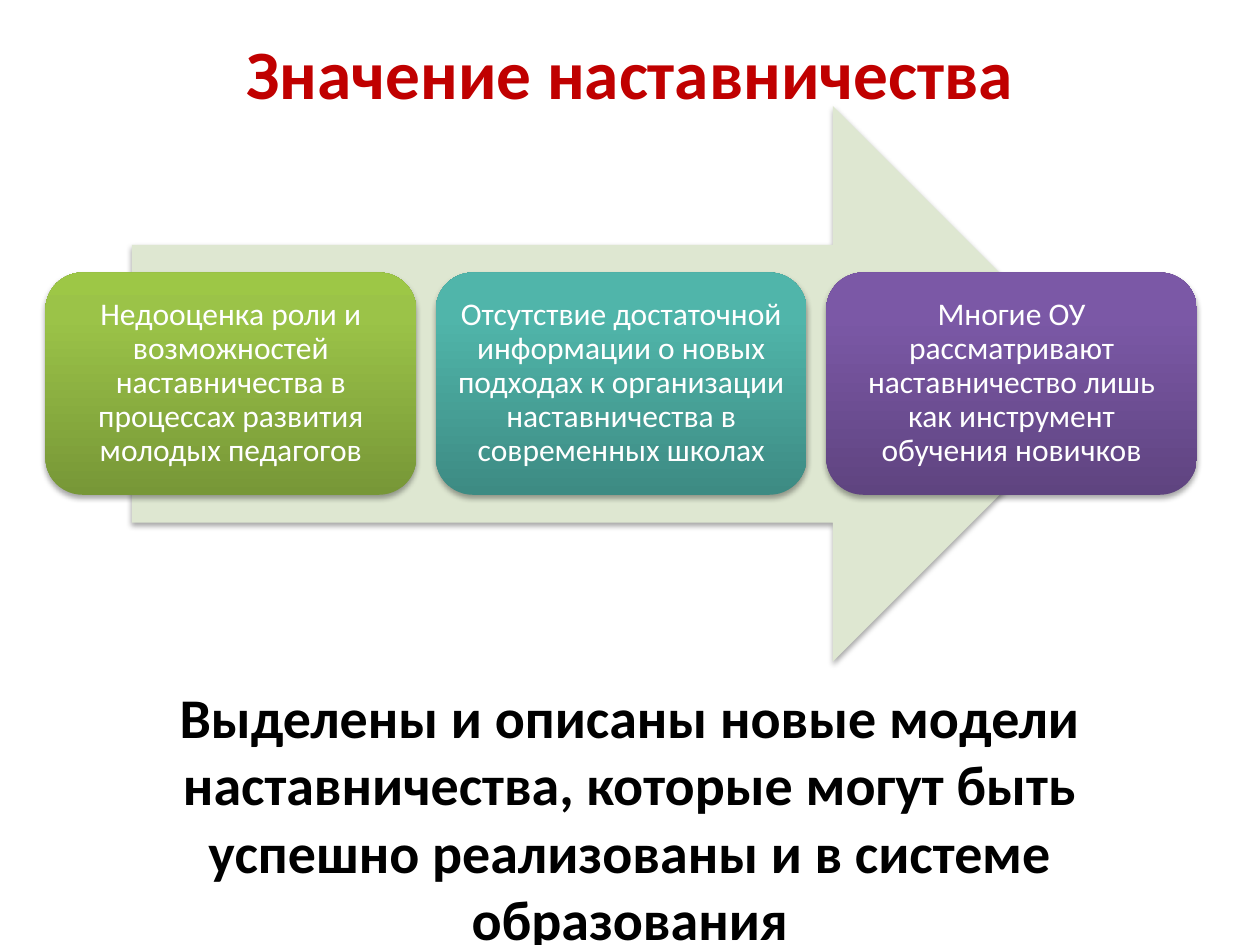
from copy import deepcopy

from lxml import etree
from pptx import Presentation
from pptx.dml.color import RGBColor
from pptx.enum import shapes, text
from pptx.oxml import ns
from pptx.util import Pt

RED = RGBColor(0xC0, 0x00, 0x00)
BLACK = RGBColor(0x00, 0x00, 0x00)
WHITE = RGBColor(0xFF, 0xFF, 0xFF)
PALE_GREEN = RGBColor(0xDE, 0xE7, 0xD1)
GREEN = (RGBColor(0x77, 0x97, 0x37), RGBColor(0x9B, 0xC3, 0x48), RGBColor(0x9D, 0xC7, 0x46))
TEAL = (RGBColor(0x3D, 0x8B, 0x83), RGBColor(0x50, 0xB5, 0xAA), RGBColor(0x4E, 0xB8, 0xAC))
PURPLE = (RGBColor(0x5F, 0x44, 0x80), RGBColor(0x7B, 0x58, 0xA6), RGBColor(0x7C, 0x57, 0xA8))
STOPS = (0, 0.8, 1)

TITLE_FONT = {"name": "Calibri", "size": Pt(39.6), "bold": True}
CONCLUSION_FONT = {"name": "Calibri", "size": Pt(32), "bold": True}
CARD_FONT = {"name": "Calibri", "size": Pt(18), "bold": False}
CENTRED = {"alignment": text.PP_ALIGN.CENTER, "space_before": Pt(0)}
CARD_PARAGRAPH = {**CENTRED, "line_spacing": 0.9}
CARD_FRAME = {
    "word_wrap": True,
    "vertical_anchor": text.MSO_ANCHOR.MIDDLE,
    **dict.fromkeys(("margin_left", "margin_right", "margin_top", "margin_bottom"), Pt(5)),
}

PROBLEMS = (
    ("Недооценка роли и возможностей наставничества в процессах развития молодых педагогов", GREEN),
    ("Отсутствие достаточной информации о новых подходах к организации "
     "наставничества в современных школах", TEAL),
    ("Многие ОУ рассматривают наставничество лишь как инструмент обучения новичков", PURPLE),
)
CONCLUSION = ("Выделены и описаны новые модели наставничества, которые могут быть "
              "успешно реализованы и в системе образования")

SHADOW = (
    f'<a:effectLst {ns.nsdecls("a")}>'
    '<a:outerShdw blurRad="39370" dist="22860" dir="5400000" rotWithShape="0">'
    '<a:srgbClr val="000000"><a:alpha val="35000"/></a:srgbClr>'
    '</a:outerShdw></a:effectLst>'
)


def apply(target, values):
    """Set each attribute named in values on target."""
    for name, value in values.items():
        setattr(target, name, value)


def write(frame, wording, font, colour, paragraph_format):
    """Put one formatted paragraph in a text frame."""
    frame.text = wording
    paragraph = frame.paragraphs[0]
    apply(paragraph, paragraph_format)
    run = paragraph.runs[0]
    apply(run.font, font)
    run.font.color.rgb = colour


def place(part, box):
    """Move a part to a left, top, width, height box in points."""
    apply(part, dict(zip(("left", "top", "width", "height"), map(Pt, box))))


def add_block(slide, kind, box):
    """Add a borderless preset shape with a soft drop shadow."""
    block = slide.shapes.add_shape(kind, *map(Pt, box))
    block.line.fill.background()
    block._element.spPr.append(etree.fromstring(SHADOW))
    return block


def fill_gradient(card, colours):
    """Fill a card with a three-stop gradient rising from the bottom."""
    card.fill.gradient()
    card.fill.gradient_angle = 90
    stop_list = card._element.spPr.find(".//" + ns.qn("a:gsLst"))
    stop_list.append(deepcopy(stop_list[-1]))
    for stop, position, colour in zip(card.fill.gradient_stops, STOPS, colours):
        stop.position = position
        stop.color.rgb = colour


def build_title(slide, box):
    """Place the red heading."""
    heading = slide.shapes.title
    place(heading, box)
    heading.text_frame.vertical_anchor = text.MSO_ANCHOR.MIDDLE
    write(heading.text_frame, "Значение наставничества", TITLE_FONT, RED, CENTRED)


def build_process(slide, box):
    """Place the wide arrow and the row of problem cards across it."""
    left, top, width, height = box
    arrow_width = 0.85 * width
    arrow = add_block(slide, shapes.MSO_SHAPE.RIGHT_ARROW,
                      (left + (width - arrow_width) / 2, top, arrow_width, height))
    arrow.fill.solid()
    arrow.fill.fore_color.rgb = PALE_GREEN

    gap = 11.2
    card_width = (width - gap * (len(PROBLEMS) - 1)) / len(PROBLEMS)
    for index, (problem, colours) in enumerate(PROBLEMS):
        card = add_block(slide, shapes.MSO_SHAPE.ROUNDED_RECTANGLE,
                         (left + index * (card_width + gap), top + 0.3 * height,
                          card_width, 0.4 * height))
        fill_gradient(card, colours)
        apply(card.text_frame, CARD_FRAME)
        write(card.text_frame, problem, CARD_FONT, WHITE, CARD_PARAGRAPH)


def build_conclusion(slide, box):
    """Place the closing statement without a bullet."""
    statement = slide.placeholders[1]
    place(statement, box)
    statement.text_frame.auto_size = text.MSO_AUTO_SIZE.NONE
    write(statement.text_frame, CONCLUSION, CONCLUSION_FONT, BLACK, CENTRED)
    properties = statement.text_frame.paragraphs[0]._p.get_or_add_pPr()
    properties.set("marL", "0")
    properties.set("indent", "0")
    etree.SubElement(properties, ns.qn("a:buNone"))


def main():
    """Build and save the slide."""
    deck = Presentation()
    deck.slide_width, deck.slide_height = Pt(720), Pt(540)
    slide = deck.slides.add_slide(deck.slide_layouts[1])
    build_title(slide, (36, 21.6, 648, 39))
    build_conclusion(slide, (36, 386.5, 648, 153.5))
    build_process(slide, (26, 60.5, 658, 317.5))
    deck.save("out.pptx")


if __name__ == "__main__":
    main()
